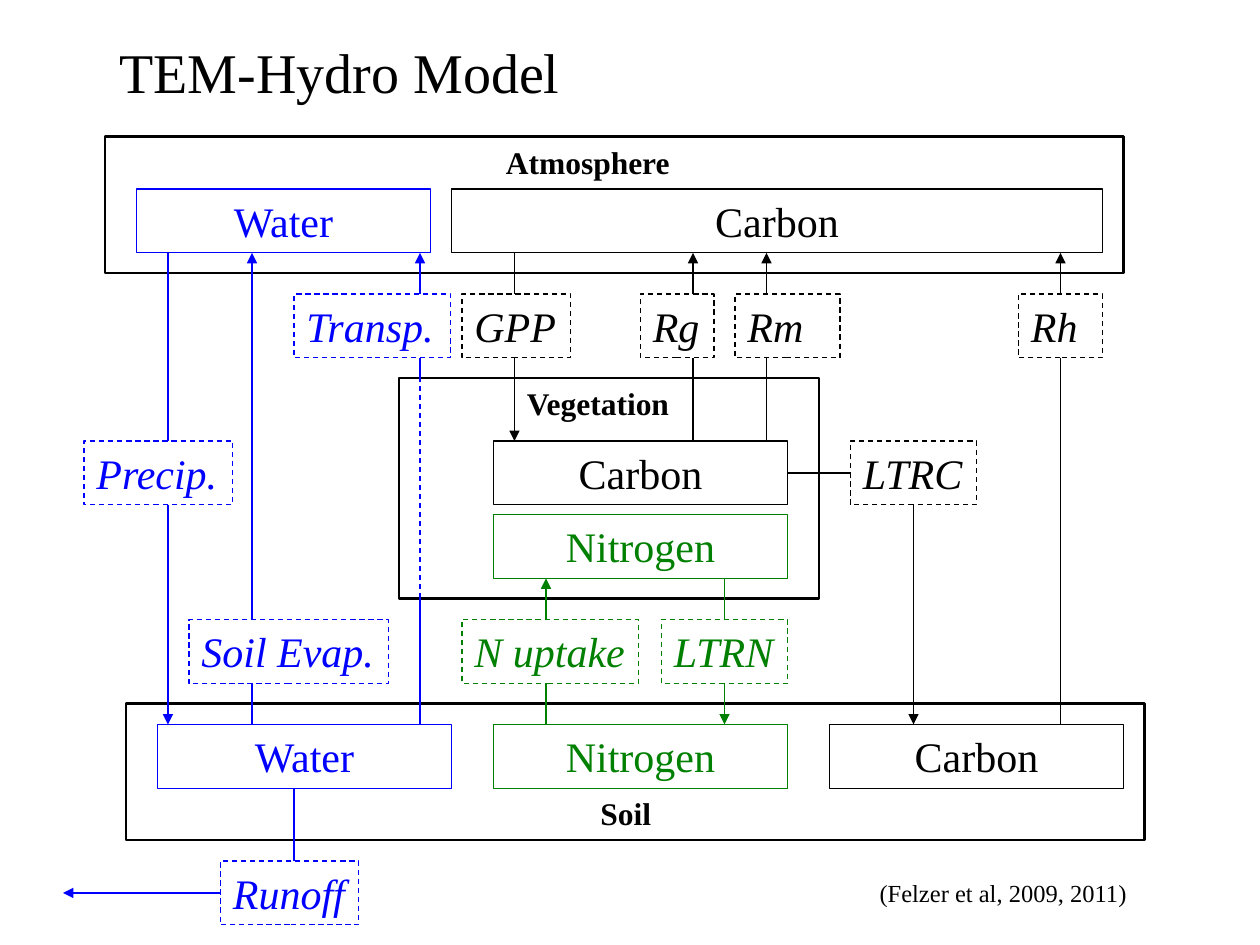
from dataclasses import dataclass

from lxml import etree
from pptx import Presentation
from pptx.dml.color import RGBColor
from pptx.enum.dml import MSO_LINE
from pptx.enum.shapes import MSO_CONNECTOR, MSO_SHAPE
from pptx.enum.text import MSO_ANCHOR, MSO_AUTO_SIZE, PP_ALIGN
from pptx.oxml.ns import qn
from pptx.util import Pt

RECTANGLE = MSO_SHAPE.RECTANGLE
STRAIGHT = MSO_CONNECTOR.STRAIGHT
DASH = MSO_LINE.DASH
LEFT, CENTER = PP_ALIGN.LEFT, PP_ALIGN.CENTER
TOP_SIDE, LEFT_SIDE, BOTTOM_SIDE, RIGHT_SIDE = range(4)
TITLE_ONLY = 5


@dataclass(frozen=True)
class Theme:
    font: str = "Times New Roman"
    carbon: RGBColor = RGBColor(0, 0, 0)
    nitrogen: RGBColor = RGBColor(0, 128, 0)
    water: RGBColor = RGBColor(0, 0, 255)
    title_size: int = 32
    store_size: int = 24
    pool_size: int = 18
    credit_size: int = 14
    pool_line: float = 1.5
    thin_line: float = 0.75
    box_height: float = 36.5


THEME = Theme()
ELEMENT_COLOURS = {"Carbon": THEME.carbon, "Nitrogen": THEME.nitrogen, "Water": THEME.water}


def write(frame, wording, size, colour=THEME.carbon, align=LEFT, wrap=True, bold=False, italic=False):
    frame.word_wrap = wrap
    frame.auto_size = MSO_AUTO_SIZE.NONE
    frame.vertical_anchor = MSO_ANCHOR.TOP
    paragraph = frame.paragraphs[0]
    paragraph.alignment = align
    run = paragraph.add_run()
    run.text = wording
    run.font.name = THEME.font
    run.font.size = Pt(size)
    run.font.bold = bold
    run.font.italic = italic
    run.font.color.rgb = colour


def add_outline(slide, box, colour, width, dash=None):
    outline = slide.shapes.add_shape(RECTANGLE, *map(Pt, box))
    outline.shadow.inherit = False
    outline.fill.background()
    outline.line.color.rgb = colour
    outline.line.width = Pt(width)
    outline.line.dash_style = dash
    return outline


def add_link(slide, start, end, colour, arrow=False, dash=None, source=None, target=None):
    link = slide.shapes.add_connector(STRAIGHT, *start, *end)
    if source:
        link.begin_connect(*source)
    if target:
        link.end_connect(*target)
    link.line.color.rgb = colour
    link.line.width = Pt(THEME.thin_line)
    link.line.dash_style = dash
    properties = link._element.spPr
    if arrow:
        etree.SubElement(properties.find(qn("a:ln")), qn("a:tailEnd"), type="triangle")
    etree.SubElement(properties, qn("a:effectLst"))


def add_pool(slide, box, heading, heading_box, stores):
    left, top, _, _ = box
    add_outline(slide, box, THEME.carbon, THEME.pool_line)
    x, y, width = heading_box
    caption = slide.shapes.add_textbox(Pt(left + x), Pt(top + y), Pt(width), Pt(29))
    write(caption.text_frame, heading, THEME.pool_size, bold=True)
    pool = {}
    for element, x, y, width in stores:
        colour = ELEMENT_COLOURS[element]
        store = add_outline(slide, (left + x, top + y, width, THEME.box_height), colour, THEME.thin_line)
        write(store.text_frame, element, THEME.store_size, colour, CENTER)
        pool[element] = store
    return pool


def add_flux_label(slide, wording, left, top, width, colour):
    label = add_outline(slide, (left, top, width, THEME.box_height), colour, THEME.thin_line, DASH)
    label.text_frame.margin_right = 0
    write(label.text_frame, wording, THEME.store_size, colour, italic=True)
    return label


def facing_edges(upper, lower):
    return upper.top + upper.height, lower.top


def add_flux(slide, label, x, source, target, colour, behind=None):
    x = Pt(x)
    centred = x == label.left + label.width // 2
    if source.top < target.top:
        start, entry = facing_edges(source, label)
        leave, end = facing_edges(label, target)
        sides = TOP_SIDE, BOTTOM_SIDE
    else:
        entry, start = facing_edges(label, source)
        end, leave = facing_edges(target, label)
        sides = BOTTOM_SIDE, TOP_SIDE
    inlet, outlet = [(label, side) if centred else None for side in sides]
    if behind:
        near, far = map(Pt, behind)
        add_link(slide, (x, start), (x, near), colour)
        add_link(slide, (x, near), (x, far), colour, dash=DASH)
        start = far
    add_link(slide, (x, start), (x, entry), colour, target=inlet)
    add_link(slide, (x, leave), (x, end), colour, arrow=True, source=outlet)


def add_litter_carbon(slide, plant, soil):
    colour = THEME.carbon
    label = add_flux_label(slide, "LTRC", 486, 252, 72, colour)
    middle = plant.top + plant.height // 2
    add_link(slide, (plant.left + plant.width, middle), (label.left, middle), colour,
             source=(plant, RIGHT_SIDE), target=(label, LEFT_SIDE))
    x = label.left + label.width // 2
    leave, end = facing_edges(label, soil)
    add_link(slide, (x, leave), (x, end), colour, arrow=True, source=(label, BOTTOM_SIDE))


def add_runoff(slide, soil):
    colour = THEME.water
    label = add_flux_label(slide, "Runoff", 126, 492, 79, colour)
    start, entry = facing_edges(soil, label)
    add_link(slide, (Pt(168), start), (Pt(168), entry), colour)
    middle = label.top + label.height // 2
    add_link(slide, (label.left, middle), (Pt(36), middle), colour, arrow=True,
             source=(label, LEFT_SIDE))


def add_title(slide, box):
    title = slide.shapes.title
    title.left, title.top, title.width, title.height = map(Pt, box)
    write(title.text_frame, "TEM-Hydro Model", THEME.title_size, wrap=False)


def add_credit(slide, box):
    credit = slide.shapes.add_textbox(*map(Pt, box))
    write(credit.text_frame, "(Felzer et al, 2009, 2011)", THEME.credit_size, wrap=False)


def main():
    deck = Presentation()
    deck.slide_width, deck.slide_height = Pt(720), Pt(540)
    slide = deck.slides.add_slide(deck.slide_layouts[TITLE_ONLY])
    add_title(slide, (61, 18, 269, 46))
    air = add_pool(slide, (60, 78, 582, 78), "Atmosphere", (222, 0, 120),
                   [("Water", 18, 30, 168), ("Carbon", 198, 30, 372)])
    plants = add_pool(slide, (228, 216, 240, 126), "Vegetation", (66, 0, 108),
                      [("Carbon", 54, 36, 168), ("Nitrogen", 54, 78, 168)])
    soil = add_pool(slide, (72, 402, 582, 78), "Soil", (264, 48, 54),
                    [("Water", 18, 12, 168), ("Nitrogen", 210, 12, 168), ("Carbon", 402, 12, 168)])

    fluxes = [
        ("Precip.", 48, 252, 85, 96, "Water", air, soil, None),
        ("Soil Evap.", 108, 354, 114, 144, "Water", soil, air, None),
        ("Transp.", 168, 168, 89.5, 240, "Water", soil, air, (342, 216)),
        ("GPP", 264, 168, 62, 294, "Carbon", air, plants, None),
        ("Rg", 366, 168, 42, 396, "Carbon", plants, air, None),
        ("Rm", 420, 168, 60, 438, "Carbon", plants, air, None),
        ("Rh", 582, 168, 48, 606, "Carbon", soil, air, None),
        ("N uptake", 264, 354, 101, 312, "Nitrogen", soil, plants, None),
        ("LTRN", 378, 354, 72, 414, "Nitrogen", plants, soil, None),
    ]
    for wording, left, top, width, x, element, source, target, behind in fluxes:
        colour = ELEMENT_COLOURS[element]
        label = add_flux_label(slide, wording, left, top, width, colour)
        add_flux(slide, label, x, source[element], target[element], colour, behind)
    add_litter_carbon(slide, plants["Carbon"], soil["Carbon"])
    add_runoff(slide, soil["Water"])
    add_credit(slide, (495.5, 498, 157, 24))
    deck.save("out.pptx")


if __name__ == "__main__":
    main()
